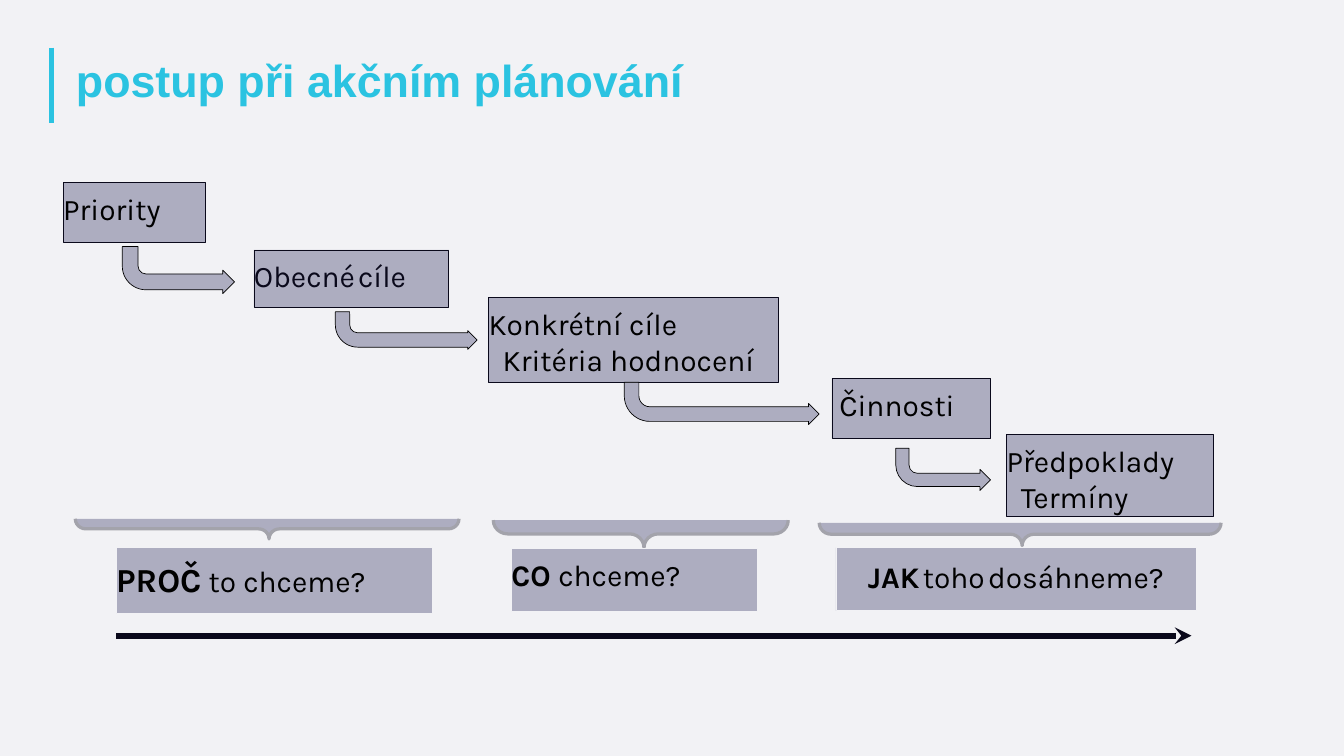
import pptx
import pptx.util
import pptx.dml.color
import pptx.enum.shapes
import pptx.enum.text
import pptx.oxml
import pptx.oxml.ns

Inches, Pt = pptx.util.Inches, pptx.util.Pt
SHAPES = pptx.enum.shapes.MSO_SHAPE
ALIGN = pptx.enum.text.PP_ALIGN

PAPER, ACCENT, FILL = "F2F2F5", "2BC3E1", "ADADC0"
INK, BLACK, BRACE_EDGE = "0A091B", "000000", "A3A3AB"

TITLE = "postup při akčním plánování"

# A run is (text, size, bold, font, colour); a paragraph is (indent, runs).
def karla(text, size=32, bold=False, colour=BLACK):
    return text, size, bold, "Karla", colour


thin_space = (" ", 16, True, "Calibri", INK)

# (left, top, width, height), paragraphs
STEPS = [
    ((0.94, 2.71, 2.11, 0.89), [(0, [karla("Priority")])]),
    ((3.78, 3.72, 2.9, 0.85), [(0, [karla("Obecné", colour=INK),
                                    (" ", 12, False, "Times New Roman", INK),
                                    karla("cíle", colour=INK)])]),
    ((7.27, 4.43, 4.31, 1.26), [(0, [karla("Konkrétní cíle")]),
                                (0.21, [karla("Kritéria hodnocení")])]),
    ((12.38, 5.63, 2.36, 0.89), [(0.11, [karla("Činnosti")])]),
    ((14.98, 6.47, 3.08, 1.21), [(0, [karla("Předpoklady")]),
                                 (0.21, [karla("Termíny")])]),
]

# (left, top, width, height), shaft thickness, bend radius
STEP_ARROWS = [
    ((1.82, 3.67, 1.67, 0.7), 0.336, 0.502),
    ((4.99, 4.64, 2.11, 0.56), 0.381, 0.595),
    ((9.29, 5.69, 2.9, 0.63), 0.345, 0.606),
    ((13.33, 6.67, 1.41, 0.63), 0.313, 0.511),
]

# brace as seen, its point, question box, alignment, line spacing, runs
QUESTIONS = [
    ((1.12, 7.72, 5.71, 0.3), 0.495, (1.73, 8.15, 4.7, 0.98), ALIGN.LEFT, 1.07,
     [karla("PROČ", 36, True), karla(" to chceme?")]),
    ((7.34, 7.74, 4.39, 0.41), 0.489, (7.61, 8.16, 3.66, 0.94), ALIGN.LEFT, 1.0,
     [karla("CO ", bold=True), karla("chceme?")]),
    ((12.19, 7.78, 5.98, 0.34), 0.495, (12.44, 8.15, 5.36, 0.94), ALIGN.CENTER, 1.07,
     [karla("JAK", bold=True), thin_space, karla("toho"), thin_space,
      karla("dosáhneme?")]),
]


def rgb(colour):
    return pptx.dml.color.RGBColor.from_string(colour)


def add_runs(paragraph, runs):
    for text, size, bold, font, colour in runs:
        run = paragraph.add_run()
        run.text = text
        run.font.size = Pt(size)
        run.font.bold = bold
        run.font.name = font
        run.font.color.rgb = rgb(colour)


def add_shape(slide, preset, box, edge, weight=0.75, adjustments=()):
    shape = slide.shapes.add_shape(preset, *map(Inches, box))
    shape.shadow.inherit = False
    shape.fill.solid()
    shape.fill.fore_color.rgb = rgb(FILL)
    shape.line.color.rgb = rgb(edge)
    shape.line.width = Pt(weight)
    for index, value in enumerate(adjustments):
        shape.adjustments[index] = value
    return shape


def add_text_box(slide, box, edge, paragraphs, align=ALIGN.LEFT, spacing=1.0):
    frame = add_shape(slide, SHAPES.RECTANGLE, box, edge).text_frame
    frame.word_wrap = True
    frame.vertical_anchor = pptx.enum.text.MSO_ANCHOR.TOP
    frame.margin_left = frame.margin_right = 0
    frame.margin_top, frame.margin_bottom = Inches(0.12), Inches(0.05)
    for index, (indent, runs) in enumerate(paragraphs):
        paragraph = frame.add_paragraph() if index else frame.paragraphs[0]
        paragraph.alignment = align
        paragraph.line_spacing = spacing
        if indent:
            paragraph._p.get_or_add_pPr().set("marL", str(Inches(indent)))
        add_runs(paragraph, runs)


def add_line(slide, start, end, colour, weight, arrowhead=None):
    line = slide.shapes.add_connector(
        pptx.enum.shapes.MSO_CONNECTOR.STRAIGHT, *map(Inches, start + end))
    line.line.color.rgb = rgb(colour)
    line.line.width = Pt(weight)
    properties = line._element.spPr
    if arrowhead:
        tail = pptx.oxml.ns.qn("a:tailEnd")
        outline = properties.find(pptx.oxml.ns.qn("a:ln"))
        outline.append(outline.makeelement(tail, {"type": arrowhead}))
    properties.append(properties.makeelement(pptx.oxml.ns.qn("a:effectLst"), {}))


def add_step_arrow(slide, box, shaft, bend):
    arrow = add_shape(slide, SHAPES.BENT_ARROW, box, BLACK,
                      adjustments=(shaft, 0.25, 0.25, bend))
    arrow._element.spPr.find(pptx.oxml.ns.qn("a:xfrm")).set("flipV", "1")


def add_brace(slide, box, point):
    """Turn a right brace so that it fills box and points down."""
    left, top, width, height = box
    shift = (width - height) / 2
    brace = add_shape(slide, SHAPES.RIGHT_BRACE,
                      (left + shift, top - shift, height, width),
                      BRACE_EDGE, 3.5, (0.523, point))
    brace.rotation = 90


def add_title(slide):
    title = slide.shapes.title
    title.left, title.top, title.width, title.height = map(
        Inches, (1.03, 0.88, 18.97, 0.71))
    frame = title.text_frame
    frame.word_wrap = True
    frame.vertical_anchor = pptx.enum.text.MSO_ANCHOR.MIDDLE
    paragraph = frame.paragraphs[0]
    paragraph.alignment = ALIGN.LEFT
    paragraph.line_spacing = 0.9
    add_runs(paragraph, [(TITLE, 48, True, "Arial", ACCENT)])


def main():
    deck = pptx.Presentation()
    deck.slide_width, deck.slide_height = Inches(20), Inches(11.25)
    slide = deck.slides.add_slide(deck.slide_layouts.get_by_name("Title Only"))
    slide.background.fill.solid()
    slide.background.fill.fore_color.rgb = rgb(PAPER)

    add_line(slide, (0.77, 0.71), (0.77, 1.83), ACCENT, 5)
    add_title(slide)
    for box, paragraphs in STEPS:
        add_text_box(slide, box, INK, paragraphs)
    for box, shaft, bend in STEP_ARROWS:
        add_step_arrow(slide, box, shaft, bend)
    for brace, point, box, align, spacing, runs in QUESTIONS:
        add_brace(slide, brace, point)
        add_text_box(slide, box, PAPER, [(0, runs)], align, spacing)
    add_line(slide, (1.73, 9.46), (17.73, 9.46), INK, 6, "stealth")
    deck.save("out.pptx")


if __name__ == "__main__":
    main()
